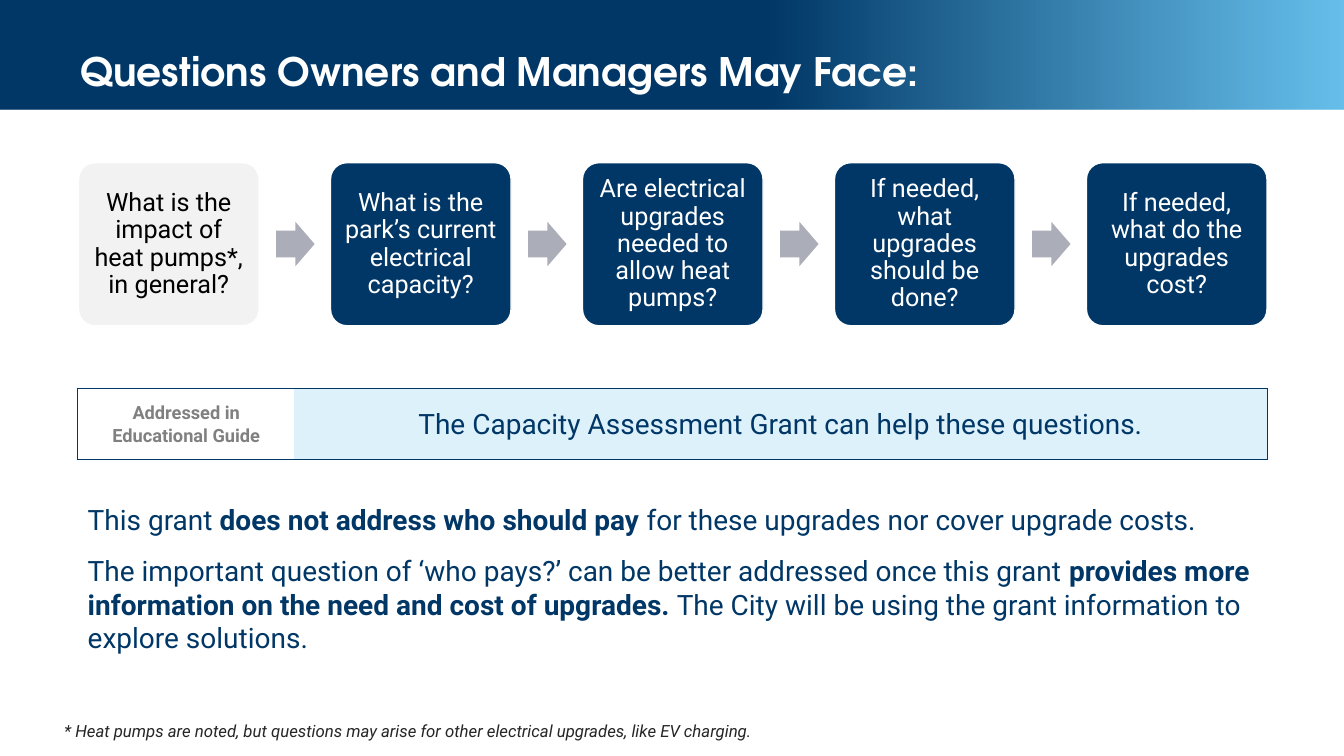
from lxml import etree
from pptx import Presentation
from pptx import util as u
from pptx.dml import color
from pptx.enum import shapes, text
from pptx.oxml import ns

NAVY, SKY, PALE_BLUE = "013766", "57B9E9", "DDF1FB"
WHITE, BLACK, LIGHT_GRAY = "FFFFFF", "000000", "F2F2F2"
ARROW_GRAY, LABEL_GRAY, NOTE_GRAY = "ABAEB8", "808080", "262626"
BODY_FONT, TITLE_FONT = "Roboto", "TeX Gyre Adventor"

QUESTIONS = [
    "What is the impact of heat pumps*, in general?",
    "What is the park’s current electrical capacity?",
    "Are electrical upgrades needed to allow heat pumps?",
    "If needed, what upgrades should be done?",
    "If needed, what do the upgrades cost?",
]
STEP_PITCH = 6.35
GRANT_PARAGRAPHS = [
    [("This grant ", False), ("does not address who should pay ", True),
     ("for these upgrades nor cover upgrade costs.", False)],
    [("The important question of ‘who pays?’ can be better addressed once this grant ", False),
     ("provides more information on the need and cost of upgrades.", True),
     (" The City will be using the grant information to explore solutions.", False)],
]


def rgb(value):
    return color.RGBColor.from_string(value)


def apply(target, values):
    for name, value in values.items():
        setattr(target, name, value)


def margins(horizontal, vertical):
    return {"margin_left": u.Cm(horizontal), "margin_right": u.Cm(horizontal),
            "margin_top": u.Cm(vertical), "margin_bottom": u.Cm(vertical)}


def write(paragraph, runs, size, colour, paragraph_format=None, font="Roboto", italic=False):
    """Fill a paragraph with (wording, bold) runs."""
    apply(paragraph, paragraph_format or {})
    for wording, bold in runs:
        run = paragraph.add_run()
        run.text = wording
        apply(run.font, {"name": font, "size": u.Pt(size), "bold": bold, "italic": italic})
        run.font.color.rgb = rgb(colour)


def add_box(slide, kind, left, top, width, height, fill=None, line=None):
    shape = slide.shapes.add_shape(kind, u.Cm(left), u.Cm(top), u.Cm(width), u.Cm(height))
    shape.shadow.inherit = False
    if fill:
        shape.fill.solid()
        shape.fill.fore_color.rgb = rgb(fill)
    if line:
        shape.line.color.rgb = rgb(line)
        shape.line.width = u.Pt(1)
    else:
        shape.line.fill.background()
    return shape


def add_text_frame(slide, left, top, width, height, frame_format=None):
    box = slide.shapes.add_textbox(u.Cm(left), u.Cm(top), u.Cm(width), u.Cm(height))
    apply(box.text_frame, {"word_wrap": True, **(frame_format or {})})
    return box.text_frame


def add_banner(slide):
    banner = add_box(slide, shapes.MSO_SHAPE.RECTANGLE, 0, 0, 33.87, 2.75)
    banner.fill.gradient()
    banner.fill.gradient_angle = 0
    for stop, position, colour in zip(banner.fill.gradient_stops, (0.57, 1), (NAVY, SKY)):
        stop.position = position
        stop.color.rgb = rgb(colour)
    sky = banner.element.spPr.findall(".//" + ns.qn("a:srgbClr"))[-1]
    etree.SubElement(sky, ns.qn("a:alpha"), val="90000")

    frame = add_text_frame(slide, 2.03, 1.04, 25.5, 1.65,
                           {**margins(0, 0.2), "vertical_anchor": text.MSO_ANCHOR.MIDDLE})
    write(frame.paragraphs[0], [("Questions Owners and Managers May Face:", True)], 28, WHITE,
          {"line_spacing": 0.9}, TITLE_FONT)


def add_question(slide, index, question):
    fill, colour = (NAVY, WHITE) if index else (LIGHT_GRAY, BLACK)
    box = add_box(slide, shapes.MSO_SHAPE.ROUNDED_RECTANGLE,
                  1.98 + index * STEP_PITCH, 4.1, 4.55, 4.11, fill, WHITE)
    box.adjustments[0] = 0.1
    apply(box.text_frame, {**margins(0.18, 0.18), "word_wrap": True,
                           "vertical_anchor": text.MSO_ANCHOR.MIDDLE})
    write(box.text_frame.paragraphs[0], [(question, False)], 18, colour,
          {"alignment": text.PP_ALIGN.CENTER, "line_spacing": 0.9})


def add_arrow(slide, index):
    arrow = add_box(slide, shapes.MSO_SHAPE.RIGHT_ARROW,
                    6.96 + index * STEP_PITCH, 5.59, 0.97, 1.12, ARROW_GRAY)
    arrow.adjustments[0] = 0.6
    arrow.adjustments[1] = 0.5


def set_borders(cell, visible_sides):
    properties = cell._tc.get_or_add_tcPr()
    for position, side in enumerate("LRTB"):
        line = etree.Element(ns.qn(f"a:ln{side}"), w=str(u.Pt(0.5)))
        if side in visible_sides:
            fill = etree.SubElement(line, ns.qn("a:solidFill"))
            etree.SubElement(fill, ns.qn("a:srgbClr"), val=NAVY)
        else:
            etree.SubElement(line, ns.qn("a:noFill"))
        properties.insert(position, line)


def add_coverage_table(slide):
    table = slide.shapes.add_table(1, 2, u.Cm(1.96), u.Cm(9.78), u.Cm(29.97), u.Cm(1.8)).table
    apply(table, {"first_row": False, "horz_banding": False})
    columns = [
        (5.46, "Addressed in Educational Guide", 13, LABEL_GRAY, True, WHITE, "LTB"),
        (24.51, "The Capacity Assessment Grant can help these questions.", 20, NAVY, False,
         PALE_BLUE, "RTB"),
    ]
    for index, (width, wording, size, colour, bold, fill, sides) in enumerate(columns):
        table.columns[index].width = u.Cm(width)
        cell = table.cell(0, index)
        apply(cell, {**margins(0.18, 0), "vertical_anchor": text.MSO_ANCHOR.MIDDLE})
        cell.fill.solid()
        cell.fill.fore_color.rgb = rgb(fill)
        set_borders(cell, sides)
        write(cell.text_frame.paragraphs[0], [(wording, bold)], size, colour,
              {"alignment": text.PP_ALIGN.CENTER, "line_spacing": 1.07})


def add_grant_text(slide):
    frame = add_text_frame(slide, 1.96, 12.55, 29.97, 4.11)
    for index, runs in enumerate(GRANT_PARAGRAPHS):
        paragraph = frame.add_paragraph() if index else frame.paragraphs[0]
        write(paragraph, runs, 20, NAVY,
              {"space_before": u.Pt(6 if index else 0), "space_after": u.Pt(6)})


def add_footnote(slide):
    frame = add_text_frame(slide, 1.37, 18.01, 21.74, 0.76)
    note = ("* Heat pumps are noted, but questions may arise for other electrical upgrades, "
            "like EV charging.")
    write(frame.paragraphs[0], [(note, False)], 12, NOTE_GRAY, {"line_spacing": 1.07},
          italic=True)


def main():
    presentation = Presentation()
    apply(presentation, {"slide_width": u.Cm(33.87), "slide_height": u.Cm(19.05)})
    slide = presentation.slides.add_slide(presentation.slide_layouts[6])
    add_banner(slide)
    for index, question in enumerate(QUESTIONS):
        add_question(slide, index, question)
        if index < len(QUESTIONS) - 1:
            add_arrow(slide, index)
    add_coverage_table(slide)
    add_footnote(slide)
    add_grant_text(slide)
    presentation.save("out.pptx")


if __name__ == "__main__":
    main()
